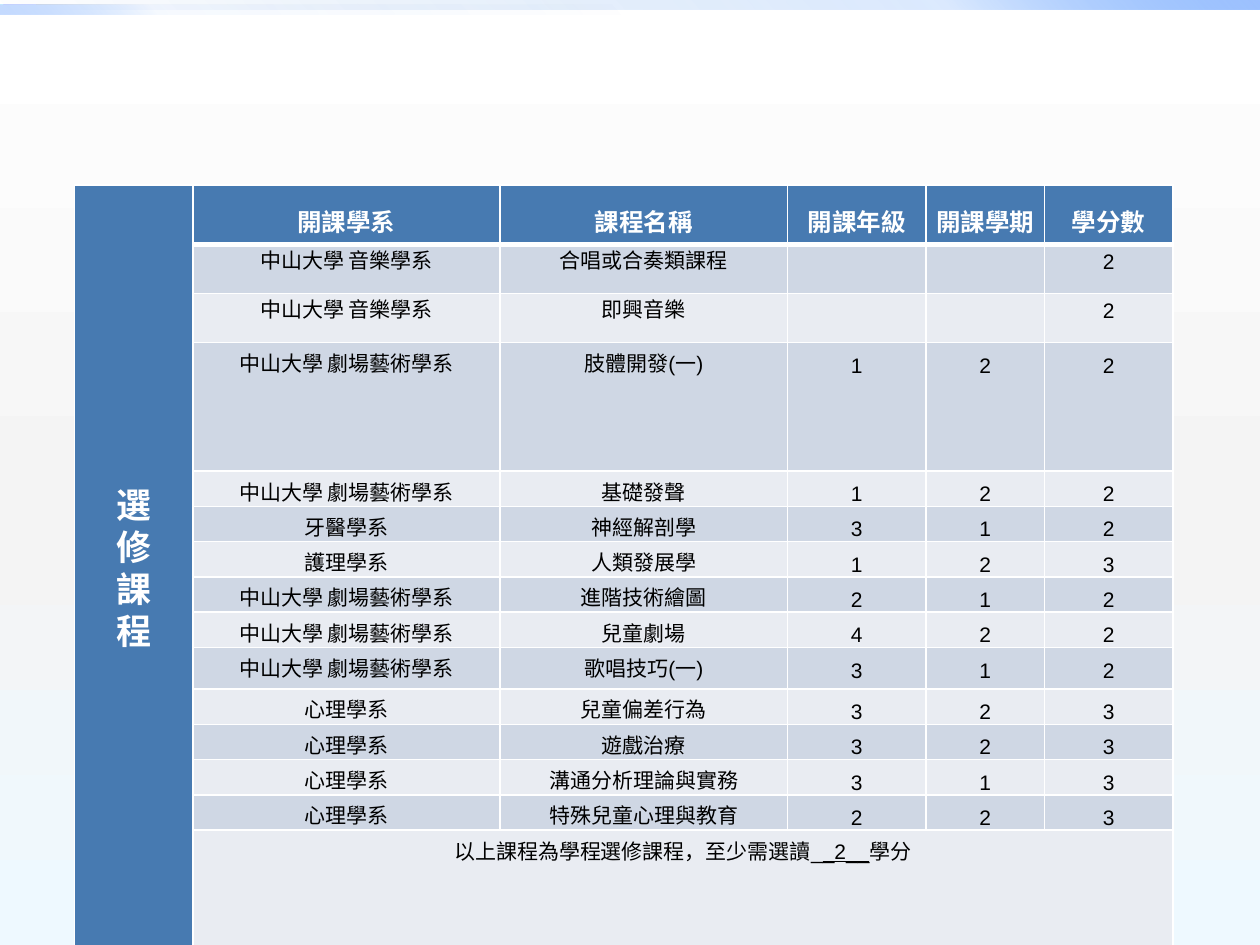
from lxml import etree
from pptx import Presentation
from pptx.dml.color import RGBColor
from pptx.enum.shapes import MSO_SHAPE
from pptx.enum.text import MSO_ANCHOR, PP_ALIGN
from pptx.oxml.ns import qn
from pptx.util import Inches, Pt

RECT = MSO_SHAPE.RECTANGLE
CENTER = PP_ALIGN.CENTER
MIDDLE, TOP = MSO_ANCHOR.MIDDLE, MSO_ANCHOR.TOP

DRAMA = "中山大學 劇場藝術學系"
MUSIC = "中山大學 音樂學系"
PSYCH = "心理學系"
HEADINGS = ["開課學系", "課程名稱", "開課年級", "開課學期", "學分數"]
COURSES = [
    (MUSIC, "合唱或合奏類課程", "", "", "2"),
    (MUSIC, "即興音樂", "", "", "2"),
    (DRAMA, "肢體開發(一)", "1", "2", "2"),
    (DRAMA, "基礎發聲", "1", "2", "2"),
    ("牙醫學系", "神經解剖學", "3", "1", "2"),
    ("護理學系", "人類發展學", "1", "2", "3"),
    (DRAMA, "進階技術繪圖", "2", "1", "2"),
    (DRAMA, "兒童劇場", "4", "2", "2"),
    (DRAMA, "歌唱技巧(一)", "3", "1", "2"),
    (PSYCH, "兒童偏差行為", "3", "2", "3"),
    (PSYCH, "遊戲治療", "3", "2", "3"),
    (PSYCH, "溝通分析理論與實務", "3", "1", "3"),
    (PSYCH, "特殊兒童心理與教育", "2", "2", "3"),
]
NOTE = [("以上課程為學程選修課程，至少需選讀_", False), ("_2__", True), ("學分", False)]
COL_SHARES = [0.094, 0.244, 0.228, 0.11, 0.094, 0.102]
ROW_INCHES = [0.47, 0.39, 0.39, 1.02] + [0.28] * 5 + [0.33] + [0.28] * 4 + [0.96]


def rgb(value):
    """Return a colour from a hex string."""
    return RGBColor.from_string(value)


class Deck:
    """Holds the style and the current slide."""

    FONT, WHITE, BLACK, HEAD = "Arial", "FFFFFF", "000000", "477AB1"
    BANDS = ("CFD7E4", "E9ECF2")

    def __init__(self, width, height):
        """Start a deck of the given size in inches."""
        self.prs = Presentation()
        self.prs.slide_width, self.prs.slide_height = Inches(width), Inches(height)
        self.slide = self.prs.slides.add_slide(self.prs.slide_layouts[6])

    def x(self, share):
        """Return a share of the slide width."""
        return round(self.prs.slide_width * share)

    def y(self, share):
        """Return a share of the slide height."""
        return round(self.prs.slide_height * share)

    def gradient(self, owner, fill, stops, angle):
        """Fill an object with a linear gradient of (position, colour, opacity) stops."""
        fill.solid()
        solid = owner.find(".//" + qn("a:solidFill"))
        grad = etree.Element(qn("a:gradFill"), rotWithShape="1")
        stop_list = etree.SubElement(grad, qn("a:gsLst"))
        for pos, colour, opacity in stops:
            gs = etree.SubElement(stop_list, qn("a:gs"), pos=str(pos * 1000))
            clr = etree.SubElement(gs, qn("a:srgbClr"), val=colour)
            etree.SubElement(clr, qn("a:alpha"), val=str(opacity * 1000))
        etree.SubElement(grad, qn("a:lin"), ang=str(angle * 60000), scaled="0")
        solid.getparent().replace(solid, grad)

    def background(self, stops, angle):
        """Set the slide background."""
        self.gradient(self.slide.element, self.slide.background.fill, stops, angle)

    def bar(self, top, width, height, opacities, angle):
        """Add a fading blue bar from the left edge."""
        sp = self.slide.shapes.add_shape(RECT, 0, self.y(top), self.x(width), self.y(height))
        sp.shadow.inherit = False
        sp.line.fill.background()
        stops = zip((0, 75, 100), ("0058B7", "4F95FF", "9EC2FF"), opacities)
        self.gradient(sp.element, sp.fill, stops, angle)

    def table(self, left, top, widths, heights):
        """Add a table with the given column shares and row inches."""
        frame = self.slide.shapes.add_table(
            len(heights), len(widths), self.x(left), self.y(top),
            self.x(sum(widths)), Inches(sum(heights)))
        table = frame.table
        table.first_row = table.horz_banding = False
        for column, share in zip(table.columns, widths):
            column.width = self.x(share)
        for row, height in zip(table.rows, heights):
            row.height = Inches(height)
        return table

    def cell(self, cell, fill, anchor=TOP, bottom=1):
        """Style a cell with its fill, margins and white borders."""
        cell.fill.solid()
        cell.fill.fore_color.rgb = rgb(fill)
        cell.vertical_anchor = anchor
        cell.margin_left = cell.margin_right = Inches(0.01)
        cell.margin_top = cell.margin_bottom = 0
        tc_pr = cell.fill._xPr
        for i, (side, width) in enumerate(zip("LRTB", (1, 1, 1, bottom))):
            ln = etree.Element(qn("a:ln" + side), w=str(Pt(width)))
            solid = etree.SubElement(ln, qn("a:solidFill"))
            etree.SubElement(solid, qn("a:srgbClr"), val=self.WHITE)
            tc_pr.insert(i, ln)

    def text(self, cell, paragraphs, size, colour, spacing, bold=False):
        """Write paragraphs of (text, underlined) runs into a cell."""
        tf = cell.text_frame
        for i, runs in enumerate(paragraphs):
            p = tf.add_paragraph() if i else tf.paragraphs[0]
            p.alignment, p.line_spacing = CENTER, spacing
            if i:
                p.space_before = Pt(12)
            for words, underline in runs:
                r = p.add_run()
                r.text = words
                r.font.name, r.font.size, r.font.bold = self.FONT, Pt(size), bold
                r.font.underline = underline
                r.font.color.rgb = rgb(colour)


def main():
    """Build the elective course slide."""
    deck = Deck(10, 7.5)
    deck.background([(0, "FFFFFF", 100), (55, "F4F4F4", 100), (100, "EEF9FF", 100)], 90)
    deck.bar(0, 1, 0.01, (0, 20, 100), 315)
    deck.bar(0.005, 0.5, 0.01, (0, 5, 60), 135)

    table = deck.table(0.059, 0.196, COL_SHARES, ROW_INCHES)
    last = len(ROW_INCHES) - 1
    title, note = table.cell(0, 0), table.cell(last, 1)
    title.merge(table.cell(last, 0))
    note.merge(table.cell(last, len(COL_SHARES) - 1))

    deck.cell(title, deck.HEAD, MIDDLE, 3)
    deck.text(title, [[(c, False)] for c in "選修課程"], 20, deck.WHITE, Pt(12), True)
    for col, heading in enumerate(HEADINGS, 1):
        cell = table.cell(0, col)
        deck.cell(cell, deck.HEAD, bottom=3)
        deck.text(cell, [[(heading, False)]], 14, deck.WHITE, 1.5, True)
    for row, course in enumerate(COURSES, 1):
        spacing = Pt(17 if course[0] == MUSIC else 20)
        for col, words in enumerate(course, 1):
            cell = table.cell(row, col)
            deck.cell(cell, deck.BANDS[(row - 1) % 2])
            if words:
                deck.text(cell, [[(words, False)]], 12, deck.BLACK, spacing)
    deck.cell(note, deck.BANDS[1])
    deck.text(note, [NOTE], 12, deck.BLACK, Pt(20))
    deck.prs.save("out.pptx")


if __name__ == "__main__":
    main()
